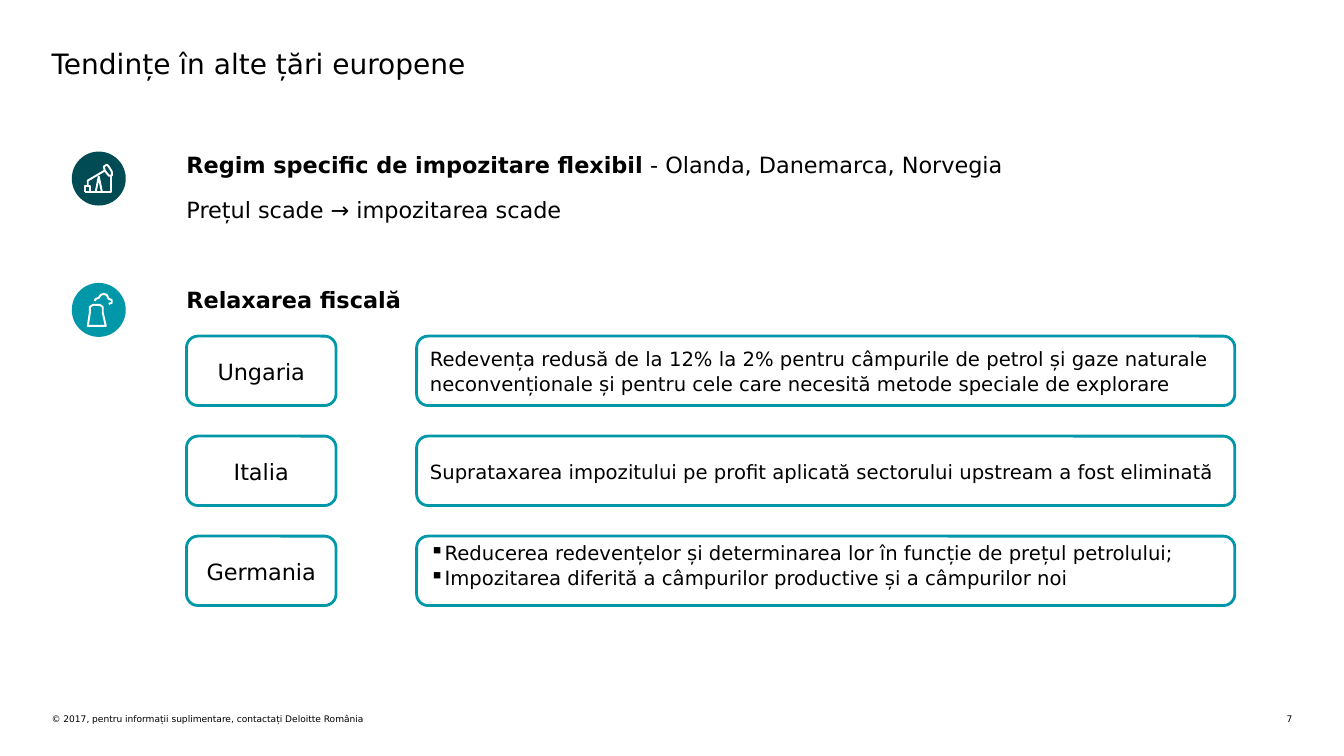
"""Builds the slide on tax trends in other European countries."""
from dataclasses import dataclass

from lxml.etree import SubElement
from pptx import Presentation
from pptx.dml.color import RGBColor
from pptx.enum.shapes import MSO_SHAPE as Shape
from pptx.enum.text import MSO_ANCHOR as Anchor, PP_ALIGN as Align
from pptx.oxml.ns import qn
from pptx.util import Cm, Pt


@dataclass(frozen=True)
class Theme:
    font: str = "DejaVu Sans"
    ink: RGBColor = RGBColor(0x00, 0x00, 0x00)
    paper: RGBColor = RGBColor(0xFF, 0xFF, 0xFF)
    petrol: RGBColor = RGBColor(0x00, 0x4B, 0x54)
    teal: RGBColor = RGBColor(0x00, 0x97, 0xA9)
    title: float = 20
    body: float = 16
    detail: float = 14
    footer: float = 6.5
    border: float = 2
    stroke: float = 1.4


def apply(target, values):
    for name, value in values.items():
        setattr(target, name, value)


class SlideBuilder:
    def __init__(self, slide, theme):
        self.slide, self.theme = slide, theme
        self.shapes = slide.shapes

    def fill_text(self, shape, paragraphs, size, inset=0, bullet=None, frame=None, **form):
        text = shape.text_frame
        margins = {f"margin_{side}": Cm(inset) for side in ("left", "top", "right", "bottom")}
        apply(text, {"word_wrap": True, **margins, **(frame or {})})
        for index, runs in enumerate(paragraphs):
            paragraph = text.add_paragraph() if index else text.paragraphs[0]
            if bullet:
                properties = paragraph._p.get_or_add_pPr()
                for name in ("marL", "indent"):
                    properties.set(name, "0")
                SubElement(properties, qn("a:buChar")).set("char", bullet)
            apply(paragraph, {"alignment": Align.LEFT, **form})
            for words, bold in runs:
                run = paragraph.add_run()
                run.text = words
                apply(run.font, {"name": self.theme.font, "size": Pt(size), "bold": bold})
                run.font.color.rgb = self.theme.ink
        return text

    def title(self, words, *box):
        heading = self.shapes.title
        apply(heading, dict(zip(("left", "top", "width", "height"), map(Cm, box))))
        self.fill_text(heading, [[(words, False)]], self.theme.title,
                       frame={"vertical_anchor": Anchor.MIDDLE})

    def text(self, paragraphs, box, size, **form):
        return self.fill_text(self.shapes.add_textbox(*map(Cm, box)), paragraphs, size, **form)

    def card(self, lines, box, size, **form):
        card = self.shapes.add_shape(Shape.ROUNDED_RECTANGLE, *map(Cm, box))
        card.shadow.inherit = False
        card.fill.solid()
        card.fill.fore_color.rgb = self.theme.paper
        card.line.color.rgb = self.theme.teal
        card.line.width = Pt(self.theme.border)
        form["frame"] = {"vertical_anchor": Anchor.MIDDLE, **form.get("frame", {})}
        self.fill_text(card, [[(line, False)] for line in lines], size,
                       inset=0.25, line_spacing=1.06, **form)

    def icon(self, left, top, color, strokes):
        diameter = Cm(1.36)
        disc = self.shapes.add_shape(Shape.OVAL, Cm(left), Cm(top), diameter, diameter)
        disc.shadow.inherit = False
        disc.fill.solid()
        disc.fill.fore_color.rgb = color
        disc.line.fill.background()
        for points, closed in strokes:
            builder = self.shapes.build_freeform(*points[0], scale=diameter / 54)
            builder.add_line_segments(points[1:], close=closed)
            stroke = builder.convert_to_shape(Cm(left), Cm(top))
            stroke.shadow.inherit = False
            stroke.fill.background()
            stroke.line.color.rgb = self.theme.paper
            stroke.line.width = Pt(self.theme.stroke)


PUMP = [
    ([(13, 40), (13, 34), (18, 34), (18, 40)], False),
    ([(16, 34), (16, 29), (33, 19)], False),
    ([(33, 19), (32, 15), (35, 13), (37, 15), (40, 20), (40, 24), (37, 24)], True),
    ([(24, 40), (27, 25), (30, 40)], False),
    ([(13, 40), (39, 40), (39, 24)], False),
]
TOWER = [
    ([(16, 43), (18, 30), (18, 24), (21, 22), (25, 22), (28, 22), (31, 24), (31, 30), (34, 43)], True),
    ([(23, 18), (24, 16), (27, 15), (29, 12), (32, 11), (35, 12), (37, 16), (40, 17), (40, 20), (37, 21)], False),
]
COUNTRIES = [
    ("Ungaria", ["Redevența redusă de la 12% la 2% pentru câmpurile de petrol și gaze naturale "
                 "neconvenționale și pentru cele care necesită metode speciale de explorare"], {}),
    ("Italia", ["Suprataxarea impozitului pe profit aplicată sectorului upstream a fost eliminată"], {}),
    ("Germania", ["Reducerea redevențelor și determinarea lor în funcție de prețul petrolului;",
                  "Impozitarea diferită a câmpurilor productive și a câmpurilor noi"],
     {"bullet": "▪", "frame": {"vertical_anchor": Anchor.TOP, "margin_top": Cm(0)}}),
]


def main():
    deck = Presentation()
    apply(deck, {"slide_width": Cm(33.87), "slide_height": Cm(19.05)})
    theme = Theme()
    page = SlideBuilder(deck.slides.add_slide(deck.slide_layouts[5]), theme)

    page.title("Tendințe în alte țări europene", 1.3, 1.12, 31.27, 0.94)
    regimes = page.text([
        [("Regim specific de impozitare flexibil", True), (" - Olanda, Danemarca, Norvegia", False)],
        [("Prețul scade → impozitarea scade", False)],
        [("Relaxarea fiscală", True)],
    ], (4.7, 3.8, 27.87, 3.9), theme.body, space_after=Pt(13.3))
    regimes.paragraphs[2].space_before = Pt(32)

    page.icon(1.81, 3.82, theme.petrol, PUMP)
    page.icon(1.81, 7.13, theme.teal, TOWER)

    for row, (country, measures, form) in enumerate(COUNTRIES):
        top = 8.47 + row * 2.52
        page.card([country], (4.7, top, 3.77, 1.75), theme.body, alignment=Align.CENTER)
        page.card(measures, (10.5, top, 20.62, 1.75), theme.detail, **form)

    page.text([[("© 2017, pentru informații suplimentare, contactați Deloitte România", False)]],
              (1.3, 17.98, 14.88, 0.28), theme.footer)
    page.text([[("7", False)]], (31.7, 17.98, 0.87, 0.28), theme.footer, alignment=Align.RIGHT)
    deck.save("out.pptx")


if __name__ == "__main__":
    main()
